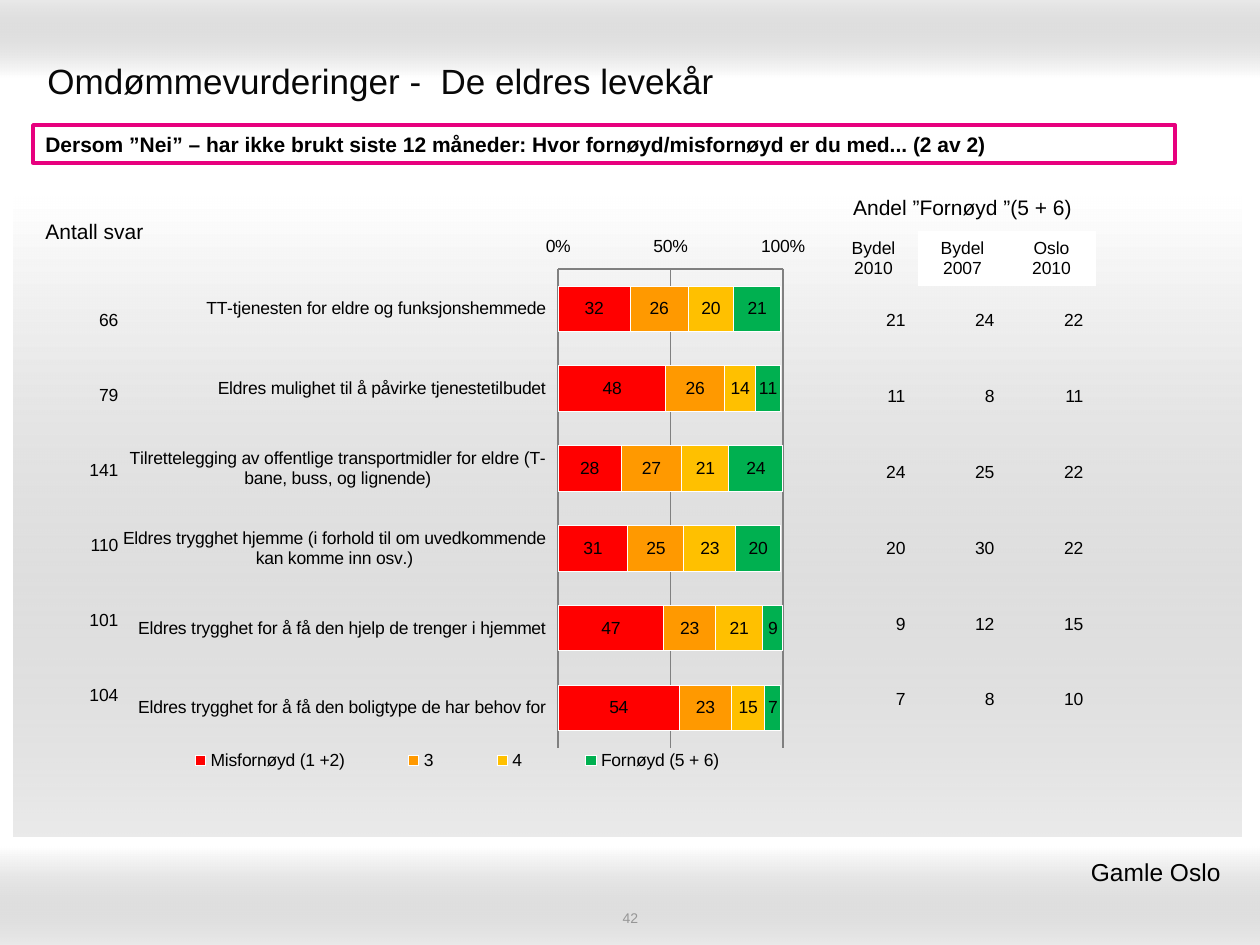
from lxml import etree
from pptx import Presentation
from pptx.chart.data import CategoryChartData
from pptx.dml.color import RGBColor
from pptx.enum.chart import XL_CHART_TYPE, XL_LABEL_POSITION, XL_LEGEND_POSITION, XL_TICK_LABEL_POSITION, XL_TICK_MARK
from pptx.enum.shapes import MSO_SHAPE
from pptx.enum.text import MSO_ANCHOR, PP_ALIGN
from pptx.oxml.ns import qn
from pptx.util import Pt

SCALE = 914400 / 126
FONT = "Arial"
LEFT, MID, RIGHT = PP_ALIGN.LEFT, PP_ALIGN.CENTER, PP_ALIGN.RIGHT
MIDDLE = MSO_ANCHOR.MIDDLE
RECT = MSO_SHAPE.RECTANGLE
STACKED = XL_CHART_TYPE.BAR_STACKED
CENTER = XL_LABEL_POSITION.CENTER
BOTTOM = XL_LEGEND_POSITION.BOTTOM
LOW = XL_TICK_LABEL_POSITION.LOW
NONE, INSIDE = XL_TICK_MARK.NONE, XL_TICK_MARK.INSIDE
NO_STYLE = "{2D5ABB26-0587-4C30-8999-92F81FD0307C}"

CHART = 123, 226, 694, 572
PLOT = 558, 269, 225, 479
KEY = 137, 746, 640, 29
CATS = [
    "TT-tjenesten for eldre og funksjonshemmede",
    "Eldres mulighet til å påvirke tjenestetilbudet",
    "Tilrettelegging av offentlige transportmidler for eldre (T-bane, buss, og lignende)",
    "Eldres trygghet hjemme (i forhold til om uvedkommende kan komme inn osv.)",
    "Eldres trygghet for å få den hjelp de trenger i hjemmet",
    "Eldres trygghet for å få den boligtype de har behov for",
]
SERIES = [
    ("Misfornøyd (1 +2)", "FF0000", [32, 48, 28, 31, 47, 54]),
    ("3", "FF9900", [26, 26, 27, 25, 23, 23]),
    ("4", "FFC000", [20, 14, 21, 23, 21, 15]),
    ("Fornøyd (5 + 6)", "00B050", [21, 11, 24, 20, 9, 7]),
]
SHARES = [(21, 24, 22), (11, 8, 11), (24, 25, 22), (20, 30, 22), (9, 12, 15), (7, 8, 10)]
COUNTS = [66, 79, 141, 110, 101, 104]


def px(n):
    return round(n * SCALE)


def rgb(code):
    return RGBColor.from_string(code)


def write(frame, text, size, align=LEFT, color="000000", bold=False):
    for i, line in enumerate(text.split("\n")):
        para = frame.paragraphs[0] if i == 0 else frame.add_paragraph()
        para.alignment = align
        run = para.add_run()
        run.text = line
        font = run.font
        font.name, font.size, font.bold = FONT, Pt(size), bold
        font.color.rgb = rgb(color)


def add_text(slide, box, text, size, align=LEFT, color="000000"):
    frame = slide.shapes.add_textbox(*map(px, box)).text_frame
    frame.word_wrap = True
    frame.vertical_anchor = MIDDLE
    write(frame, text, size, align, color)


def add_rect(slide, box):
    shape = slide.shapes.add_shape(RECT, *map(px, box))
    shape.shadow.inherit = False
    return shape


def add_band(slide, box, angle):
    band = add_rect(slide, box)
    band.line.fill.background()
    band.fill.gradient()
    band.fill.gradient_angle = angle
    for stop, code in zip(band.fill.gradient_stops, ("FFFFFF", "999999")):
        stop.color.rgb = rgb(code)
    tone = band._element.spPr.findall(".//" + qn("a:srgbClr"))[-1]
    etree.SubElement(tone, qn("a:alpha")).set("val", "20000")


def add_query(slide, box, text):
    shape = add_rect(slide, box)
    shape.fill.solid()
    shape.fill.fore_color.rgb = rgb("FFFFFF")
    shape.line.color.rgb = rgb("E7007E")
    shape.line.width = Pt(2)
    shape.text_frame.word_wrap = True
    shape.text_frame.vertical_anchor = MIDDLE
    write(shape.text_frame, text, 12, bold=True)


def add_grid(slide, left, top, wide, highs, cols):
    box = left, top, wide * cols, sum(highs)
    table = slide.shapes.add_table(len(highs), cols, *map(px, box)).table
    table.first_row = table.horz_banding = False
    table._tbl.tblPr.find(qn("a:tableStyleId")).text = NO_STYLE
    for col in table.columns:
        col.width = px(wide)
    for row, high in zip(table.rows, highs):
        row.height = px(high)
    return table


def fill_cell(cell, text, size, align, back=None):
    cell.vertical_anchor = MIDDLE
    if back:
        cell.fill.solid()
        cell.fill.fore_color.rgb = rgb(back)
    else:
        cell.fill.background()
    write(cell.text_frame, str(text), size, align)


def add_values(slide, left, top, wide, high, rows):
    table = add_grid(slide, left, top, wide, [high] * len(rows), len(rows[0]))
    for r, row in enumerate(rows):
        for c, value in enumerate(row):
            fill_cell(table.cell(r, c), value, 10, RIGHT)


def add_head(slide):
    table = add_grid(slide, 829, 185, 89, [46, 55], 3)
    table.cell(0, 0).merge(table.cell(0, 2))
    fill_cell(table.cell(0, 0), "Andel ”Fornøyd ”(5 + 6)", 12, MID)
    heads = ("Bydel\n2010", None), ("Bydel\n2007", "FFFFFF"), ("Oslo\n2010", "FFFFFF")
    for c, (text, back) in enumerate(heads):
        fill_cell(table.cell(1, c), text, 10, MID, back)


def place(part, box, inner):
    old = part.find(qn("c:layout"))
    if old is not None:
        part.remove(old)
    layout = etree.Element(qn("c:layout"))
    manual = etree.SubElement(layout, qn("c:manualLayout"))
    left, top, wide, high = CHART
    spots = [("xMode", "edge"), ("yMode", "edge"),
             ("x", (box[0] - left) / wide), ("y", (box[1] - top) / high),
             ("w", box[2] / wide), ("h", box[3] / high)]
    if inner:
        spots.insert(0, ("layoutTarget", "inner"))
    for name, value in spots:
        etree.SubElement(manual, qn("c:" + name)).set("val", str(value))
    part.insert(0 if inner else 1, layout)


def style_axes(chart):
    cat, val = chart.category_axis, chart.value_axis
    cat.reverse_order = True
    cat.major_tick_mark = NONE
    val.major_tick_mark = INSIDE
    val.minimum_scale, val.maximum_scale, val.major_unit = 0, 100, 50
    val.has_major_gridlines = True
    val.tick_labels.number_format = "General\\%"
    val.tick_labels.number_format_is_linked = False
    for axis in (cat, val):
        axis.tick_label_position = LOW
        font = axis.tick_labels.font
        font.name, font.size = FONT, Pt(10)
        font.color.rgb = rgb("000000")
        body = axis._element.find(qn("c:txPr")).find(qn("a:bodyPr"))
        body.set("rot", "0")
        body.set("vert", "horz")
    for line in (cat.format.line, val.format.line, val.major_gridlines.format.line):
        line.color.rgb = rgb("808080")
        line.width = Pt(0.75)


def add_bars(slide):
    data = CategoryChartData(number_format="0")
    data.categories = CATS
    for name, _, values in SERIES:
        data.add_series(name, values)
    chart = slide.shapes.add_chart(STACKED, *map(px, CHART), data).chart
    chart.has_title = False
    chart.font.name, chart.font.size = FONT, Pt(10)
    chart.font.color.rgb = rgb("000000")
    style_axes(chart)
    plot = chart.plots[0]
    plot.gap_width, plot.overlap, plot.vary_by_categories = 75, 100, False
    for series, (_, color, _) in zip(plot.series, SERIES):
        series.format.fill.solid()
        series.format.fill.fore_color.rgb = rgb(color)
        series.format.line.color.rgb = rgb("FFFFFF")
        labels = series.data_labels
        labels.show_value = True
        labels.number_format, labels.number_format_is_linked = "0", False
        labels.position = CENTER
    chart.has_legend = True
    chart.legend.position = BOTTOM
    chart.legend.include_in_layout = False
    place(chart._chartSpace.chart.plotArea, PLOT, True)
    place(chart.legend._element, KEY, False)


def main():
    deck = Presentation()
    deck.slide_width, deck.slide_height = px(1260), px(945)
    slide = deck.slides.add_slide(deck.slide_layouts[6])
    add_band(slide, (0, 0, 1260, 78), 90)
    add_band(slide, (0, 847, 1260, 98), 270)
    add_band(slide, (14, 197, 1227, 640), 270)
    add_text(slide, (35, 46, 1190, 70), "Omdømmevurderinger -  De eldres levekår", 20, color="080808")
    add_text(slide, (431, 909, 399, 18), "42", 8, MID, "969696")
    add_query(slide, (33, 125, 1142, 38),
              "Dersom ”Nei” – har ikke brukt siste 12 måneder: Hvor fornøyd/misfornøyd er du med... (2 av 2)")
    add_bars(slide)
    add_values(slide, 829, 282, 89, 76, SHARES)
    add_head(slide)
    add_values(slide, 65, 283, 66, 75, [(n,) for n in COUNTS])
    fill_cell(add_grid(slide, 5, 195, 179, [74], 1).cell(0, 0), "Antall svar", 12, MID)
    add_text(slide, (769, 850, 464, 43), "Gamle Oslo", 14, RIGHT)
    deck.save("out.pptx")


if __name__ == "__main__":
    main()
